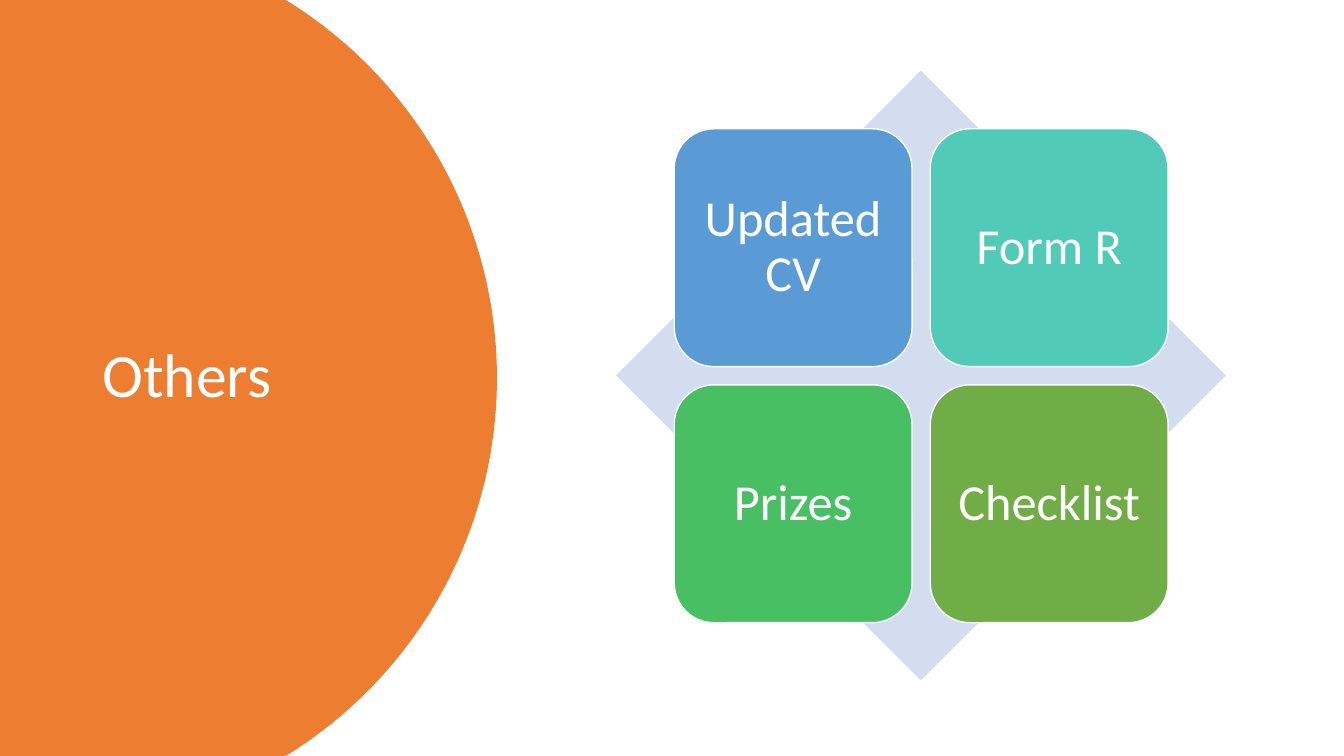
import math
from dataclasses import dataclass

import pptx
import pptx.dml.color
import pptx.enum.shapes
import pptx.enum.text
import pptx.shapes.autoshape
import pptx.slide
import pptx.util

Pt = pptx.util.Pt
RGBColor = pptx.dml.color.RGBColor
Shape = pptx.shapes.autoshape.Shape
Geometry = pptx.enum.shapes.MSO_SHAPE
Alignment = pptx.enum.text.PP_ALIGN

WHITE = RGBColor(0xFF, 0xFF, 0xFF)
ORANGE = RGBColor(0xED, 0x7D, 0x31)
PALE_BLUE = RGBColor(0xD2, 0xDE, 0xEF)
BLUE = RGBColor(0x5B, 0x9B, 0xD5)
TEAL = RGBColor(0x52, 0xCA, 0xB8)
GREEN = RGBColor(0x49, 0xBF, 0x64)
OLIVE = RGBColor(0x70, 0xAD, 0x47)

SLIDE_WIDTH, SLIDE_HEIGHT = 960, 540
ARC_CENTER_X, ARC_RADIUS, ARC_STEPS = 38, 317, 120
DIAMOND_LEFT, DIAMOND_TOP, DIAMOND_SIZE = 440, 50.4, 435.6
TILE_LEFT, TILE_TOP, TILE_SIZE, TILE_PITCH = 481.6, 92, 169.9, 182.9
TILE_INSET = 10.8

FRAME_FORMAT = {
    "word_wrap": True,
    "auto_size": pptx.enum.text.MSO_AUTO_SIZE.NONE,
    "vertical_anchor": pptx.enum.text.MSO_ANCHOR.MIDDLE,
}
TILE_MARGINS = {
    f"margin_{side}": Pt(TILE_INSET) for side in ("left", "top", "right", "bottom")
}


@dataclass(frozen=True)
class Tile:
    text: str
    color: RGBColor


TILES = [
    Tile("Updated CV", BLUE),
    Tile("Form R", TEAL),
    Tile("Prizes", GREEN),
    Tile("Checklist", OLIVE),
]


def apply_format(target: object, values: dict) -> None:
    for name, value in values.items():
        setattr(target, name, value)


def paint(shape: Shape, color: RGBColor) -> None:
    shape.shadow.inherit = False
    shape.fill.solid()
    shape.fill.fore_color.rgb = color
    shape.line.fill.background()


def write(shape: Shape, text: str, size: float, alignment: Alignment) -> None:
    frame = shape.text_frame
    frame.text = text
    apply_format(frame, FRAME_FORMAT)
    paragraph = frame.paragraphs[0]
    apply_format(paragraph, {"alignment": alignment, "line_spacing": 0.9})
    apply_format(paragraph.font, {"name": "Calibri", "size": Pt(size)})
    paragraph.font.color.rgb = WHITE


def add_title_panel(slide: pptx.slide.Slide) -> None:
    middle = SLIDE_HEIGHT / 2
    half_angle = math.asin(middle / ARC_RADIUS)
    angles = [half_angle * (2 * step / ARC_STEPS - 1) for step in range(ARC_STEPS + 1)]
    arc = [
        (
            Pt(ARC_CENTER_X + ARC_RADIUS * math.cos(angle)),
            Pt(middle + ARC_RADIUS * math.sin(angle)),
        )
        for angle in angles
    ]
    builder = slide.shapes.build_freeform(0, 0)
    builder.add_line_segments(arc + [(0, Pt(SLIDE_HEIGHT))], close=True)
    panel = builder.convert_to_shape()
    paint(panel, ORANGE)

    title = slide.shapes.title
    title.element.addprevious(panel.element)
    apply_format(
        title,
        {"left": Pt(66), "top": Pt(50.4), "width": Pt(232.6), "height": Pt(438.5)},
    )
    write(title, "Others", 44, Alignment.LEFT)


def add_diamond(slide: pptx.slide.Slide) -> None:
    diamond = slide.shapes.add_shape(
        Geometry.DIAMOND,
        Pt(DIAMOND_LEFT), Pt(DIAMOND_TOP), Pt(DIAMOND_SIZE), Pt(DIAMOND_SIZE),
    )
    paint(diamond, PALE_BLUE)


def add_tile(slide: pptx.slide.Slide, tile: Tile, row: int, column: int) -> None:
    shape = slide.shapes.add_shape(
        Geometry.ROUNDED_RECTANGLE,
        Pt(TILE_LEFT + column * TILE_PITCH),
        Pt(TILE_TOP + row * TILE_PITCH),
        Pt(TILE_SIZE),
        Pt(TILE_SIZE),
    )
    paint(shape, tile.color)
    shape.line.color.rgb = WHITE
    shape.line.width = Pt(1)
    write(shape, tile.text, 36, Alignment.CENTER)
    apply_format(shape.text_frame, TILE_MARGINS)


def main() -> None:
    presentation = pptx.Presentation()
    presentation.slide_width = Pt(SLIDE_WIDTH)
    presentation.slide_height = Pt(SLIDE_HEIGHT)
    slide = presentation.slides.add_slide(
        presentation.slide_layouts.get_by_name("Title Only")
    )
    add_title_panel(slide)
    add_diamond(slide)
    for index, tile in enumerate(TILES):
        row, column = divmod(index, 2)
        add_tile(slide, tile, row, column)
    presentation.save("out.pptx")


if __name__ == "__main__":
    main()
